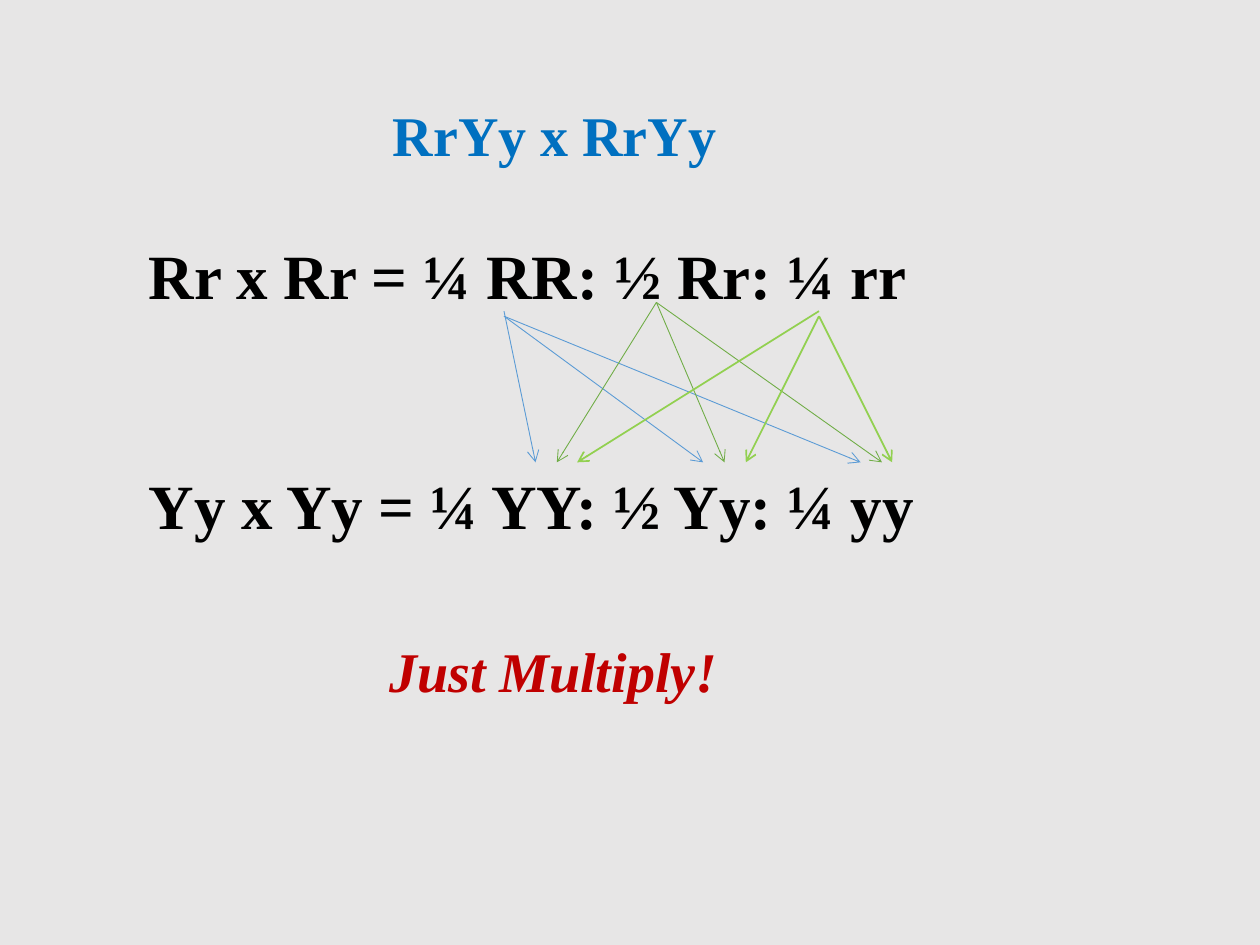
from lxml import etree
from pptx import Presentation
from pptx.dml.color import RGBColor
from pptx.enum.shapes import MSO_CONNECTOR
from pptx.oxml.ns import qn
from pptx.util import Pt

STRAIGHT = MSO_CONNECTOR.STRAIGHT
FONT = "Times New Roman"
COLORS = {
    "background": "E7E6E6",
    "title": "0070C0",
    "cross": "000000",
    "note": "C00000",
    "blue": "5B9BD5",
    "green": "70AD47",
    "lime": "92D050",
}
ARROW_END_Y = 264.2
FANS = [
    ("blue", 0.5, 288, (177.8, 180.7, 180.7), (306, 401.8, 491.8)),
    ("green", 0.5, 375.1, (172.8, 172.8, 172.8), (318.2, 414, 504)),
    ("lime", 1, 468, (177.8, 180.7, 180.7), (329.8, 426.2, 509.8)),
]


def rgb(name):
    """Return the named colour."""
    return RGBColor.from_string(COLORS[name])


def add_text(s, box, lines, size, color, italic=False, indent=0, gap=0):
    """Add a bold text box with one paragraph per line."""
    tf = s.shapes.add_textbox(*map(Pt, box)).text_frame
    tf.word_wrap = True
    for i, line in enumerate(lines):
        p = tf.add_paragraph() if i else tf.paragraphs[0]
        p.text = line
        p.font.name = FONT
        p.font.size = Pt(size)
        p.font.bold = True
        p.font.italic = italic
        p.font.color.rgb = rgb(color)
        if i:
            p.space_before = Pt(gap)
        if indent:
            p._p.get_or_add_pPr().set("marL", str(Pt(indent)))


def add_arrow(s, start, end, color, width):
    """Add a straight line with an open arrowhead at its end."""
    arrow = s.shapes.add_connector(STRAIGHT, *map(Pt, start + end))
    arrow.line.color.rgb = rgb(color)
    arrow.line.width = Pt(width)
    etree.SubElement(arrow.line._get_or_add_ln(), qn("a:tailEnd"), type="arrow")
    etree.SubElement(arrow._element.spPr, qn("a:effectLst"))


def main():
    """Build the dihybrid cross slide."""
    prs = Presentation()
    prs.slide_width, prs.slide_height = Pt(720), Pt(540)
    s = prs.slides.add_slide(prs.slide_layouts[6])
    s.background.fill.solid()
    s.background.fill.fore_color.rgb = rgb("background")

    add_text(s, (73.4, 54, 513.4, 46), ["RrYy x RrYy"], 32, "title", indent=144)
    crosses = ["Rr x Rr = ¼ RR: ½ Rr: ¼ rr", "Yy x Yy = ¼ YY: ½ Yy: ¼ yy"]
    add_text(s, (77.8, 131.8, 594, 181.4), crosses, 36, "cross", gap=88)
    for color, width, start_x, start_ys, end_xs in FANS:
        for start_y, end_x in zip(start_ys, end_xs):
            add_arrow(s, (start_x, start_y), (end_x, ARROW_END_Y), color, width)
    add_text(s, (71.3, 360, 513.4, 46), ["Just Multiply!"], 32, "note",
             italic=True, indent=144)
    prs.save("out.pptx")


if __name__ == "__main__":
    main()
